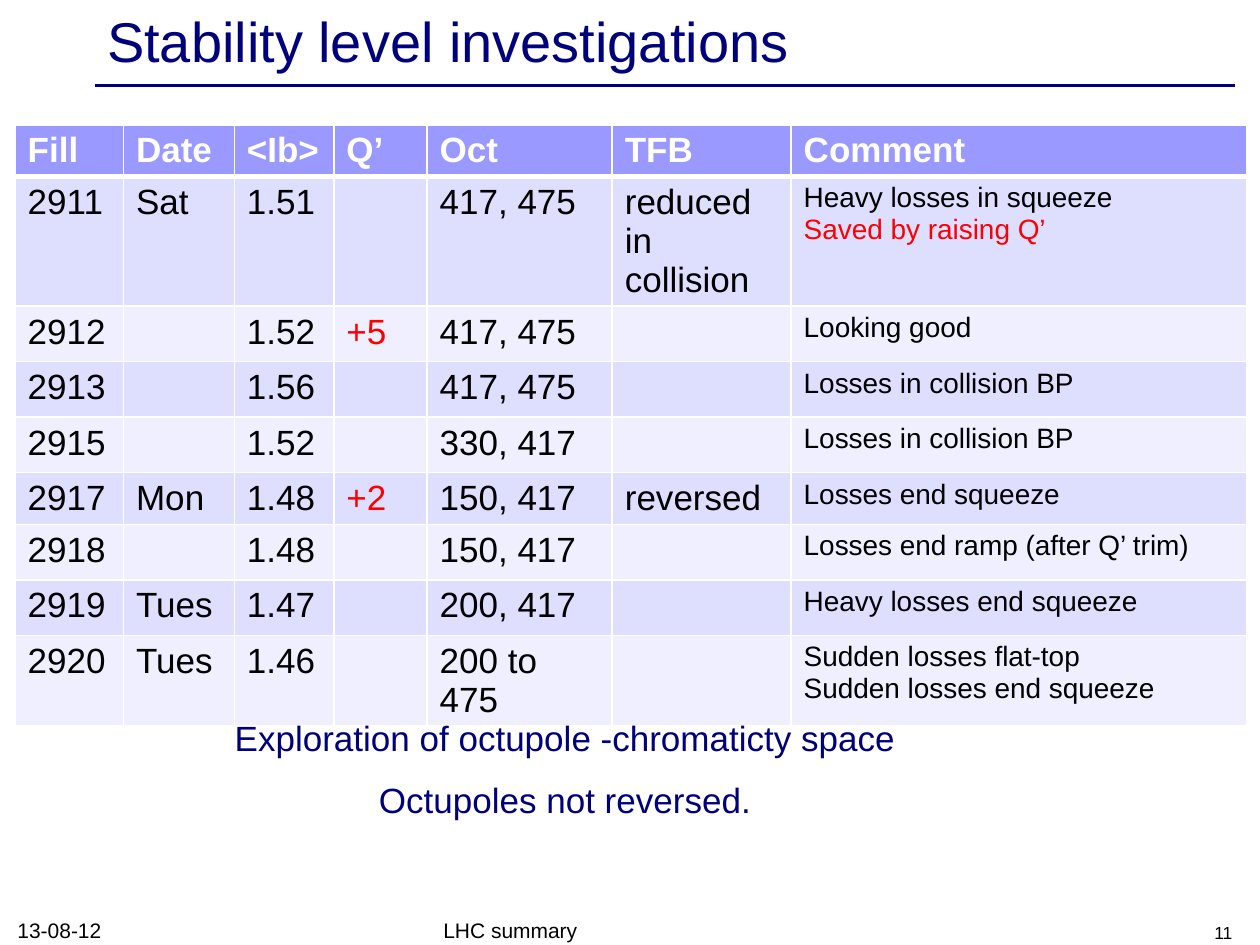
import pptx
import pptx.util
import pptx.dml.color
import pptx.enum.shapes
import pptx.enum.text
import pptx.oxml.ns
import lxml.etree

In, Pt = pptx.util.Inches, pptx.util.Pt
ALIGN, ANCHOR = pptx.enum.text.PP_ALIGN, pptx.enum.text.MSO_ANCHOR
NAVY, BLACK, WHITE, RED = "00007D", "000000", "FFFFFF", "FF0000"
HEADER_FILL, BANDS = "9999FF", ("DEDEFF", "EFEFFF")

TITLE = "Stability level investigations"
HEADER = ("Fill", "Date", "<Ib>", "Q’", "Oct", "TFB", "Comment")
FILLS = [
    ("2911", "Sat", "1.51", "", "417, 475", "reduced in collision",
     "Heavy losses in squeeze\nSaved by raising Q’"),
    ("2912", "", "1.52", "+5", "417, 475", "", "Looking good"),
    ("2913", "", "1.56", "", "417, 475", "", "Losses in collision BP"),
    ("2915", "", "1.52", "", "330, 417", "", "Losses in collision BP"),
    ("2917", "Mon", "1.48", "+2", "150, 417", "reversed", "Losses end squeeze"),
    ("2918", "", "1.48", "", "150, 417", "", "Losses end ramp (after Q’ trim)"),
    ("2919", "Tues", "1.47", "", "200, 417", "", "Heavy losses end squeeze"),
    ("2920", "Tues", "1.46", "", "200 to 475", "",
     "Sudden losses flat-top\nSudden losses end squeeze"),
]
HIGHLIGHTS = {"+5", "+2", "Saved by raising Q’"}
COLUMNS = (0.86, 0.88, 0.79, 0.74, 1.47, 1.42, 3.62)
ROW = 0.41
CONCLUSIONS = "Exploration of octupole -chromaticty space\nOctupoles not reversed."
FOOTERS = [  # text, left, width, size, alignment
    ("13-08-12", 0.04, 2.33, 12, ALIGN.LEFT),
    ("LHC summary", 3.42, 3.17, 12, ALIGN.LEFT),
    ("11", 7.55, 2.33, 10, ALIGN.RIGHT),
]


def rgb(color):
    return pptx.dml.color.RGBColor.from_string(color)


def write(tf, text, size, color, align=ALIGN.LEFT, bold=False, gap=0):
    """Fill a text frame, one paragraph a line, with gap points between them."""
    tf.text = text
    tf.word_wrap = True
    for i, p in enumerate(tf.paragraphs):
        p.alignment = align
        p.space_before = Pt(gap if i else 0)
        p.font.size = Pt(size)
        for r in p.runs:
            r.font.name, r.font.size, r.font.bold = "Arial", Pt(size), bold
            r.font.color.rgb = rgb(RED if r.text in HIGHLIGHTS else color)


def add_text(s, box, text, size, color, align, anchor=ANCHOR.TOP, gap=0):
    tf = s.shapes.add_textbox(*map(In, box)).text_frame
    write(tf, text, size, color, align, gap=gap)
    tf.vertical_anchor = anchor


def style_cell(cell, fill, bottom, top):
    tc_pr = cell._tc.get_or_add_tcPr()
    for side, width in (("L", 1), ("R", 1), ("T", top), ("B", bottom)):
        ln = lxml.etree.SubElement(tc_pr, pptx.oxml.ns.qn("a:ln" + side), w=str(Pt(width)))
        solid = lxml.etree.SubElement(ln, pptx.oxml.ns.qn("a:solidFill"))
        lxml.etree.SubElement(solid, pptx.oxml.ns.qn("a:srgbClr"), val=WHITE)
    cell.fill.solid()
    cell.fill.fore_color.rgb = rgb(fill)


def add_fill_table(s):
    rows = [HEADER] + FILLS
    table = s.shapes.add_table(len(rows), len(COLUMNS), In(0.12), In(0.99),
                               In(sum(COLUMNS)), In(ROW * len(rows))).table
    for column, width in zip(table.columns, COLUMNS):
        column.width = In(width)
    for i, row in enumerate(rows):
        table.rows[i].height = In(ROW)
        for j, text in enumerate(row):
            cell, head = table.cell(i, j), i == 0
            size = 16 if not head and j == len(COLUMNS) - 1 else 20
            write(cell.text_frame, text, size, WHITE if head else BLACK, bold=head)
            style_cell(cell, HEADER_FILL if head else BANDS[(i - 1) % 2],
                       bottom=3 if head else 1, top=3 if i == 1 else 1)


def main():
    prs = pptx.Presentation()
    prs.slide_width, prs.slide_height = In(10), In(7.5)
    s = prs.slides.add_slide(prs.slide_layouts[5])

    rule = s.shapes.add_connector(pptx.enum.shapes.MSO_CONNECTOR.STRAIGHT,
                                  In(0.75), In(0.68), In(9.8), In(0.68))
    rule.line.color.rgb, rule.line.width = rgb(NAVY), Pt(2)
    lxml.etree.SubElement(rule._element.spPr, pptx.oxml.ns.qn("a:effectLst"))

    title = s.shapes.title
    title.left, title.top, title.width, title.height = map(In, (0.75, 0.03, 9, 0.57))
    write(title.text_frame, TITLE, 32, NAVY)
    title.text_frame.vertical_anchor = ANCHOR.MIDDLE
    title.text_frame.auto_size = pptx.enum.text.MSO_AUTO_SIZE.NONE

    add_fill_table(s)
    add_text(s, (0.98, 5.64, 7.01, 0.94), CONCLUSIONS, 20, NAVY, ALIGN.CENTER, gap=11)
    for text, left, width, size, align in FOOTERS:
        add_text(s, (left, 7.25, width, 0.28), text, size, BLACK, align, ANCHOR.BOTTOM)
    prs.save("out.pptx")


if __name__ == "__main__":
    main()
